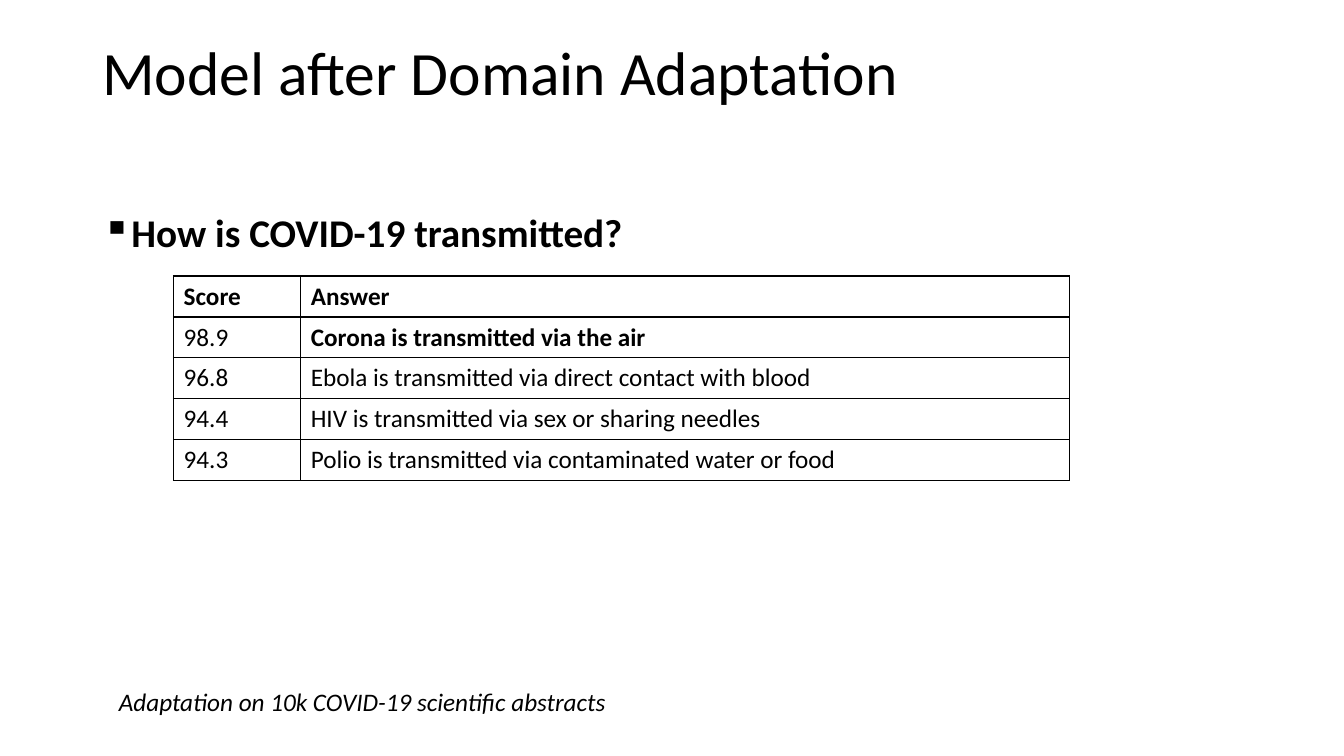
import pptx
import pptx.dml.color
import pptx.enum.text
import pptx.oxml
import pptx.oxml.ns
import pptx.util
from lxml import etree

Pt = pptx.util.Pt
ANCHOR = pptx.enum.text.MSO_ANCHOR
BLACK = pptx.dml.color.RGBColor(0, 0, 0)
WHITE = pptx.dml.color.RGBColor(255, 255, 255)
qn = pptx.oxml.ns.qn

ANSWERS = [
    ("Score", "Answer"),
    ("98.9", "Corona is transmitted via the air"),
    ("96.8", "Ebola is transmitted via direct contact with blood"),
    ("94.4", "HIV is transmitted via sex or sharing needles"),
    ("94.3", "Polio is transmitted via contaminated water or food"),
]
BOLD_CELLS = {(0, 0), (0, 1), (1, 1)}
COLUMN_WIDTHS = (90.8, 549.4)
ROW_HEIGHT = 29.2


def write(tf, text, **formats):
    p = tf.paragraphs[0]
    r = p.add_run()
    r.text = text
    r.font.color.rgb = BLACK
    for name, value in {"name": "Calibri", **formats}.items():
        setattr(r.font, name, value)
    return p


def add_text(box, text, anchor, wrap, **formats):
    """Add a text box at box (left, top, width, height) in points."""
    tf = s.shapes.add_textbox(*map(Pt, box)).text_frame
    tf.word_wrap = wrap
    tf.vertical_anchor = anchor
    return write(tf, text, **formats)


prs = pptx.Presentation()
prs.slide_width, prs.slide_height = Pt(960), Pt(540)
s = prs.slides.add_slide(prs.slide_layouts[6])

# Title and question
title = add_text((66, 1.4, 828, 104.4), "Model after Domain Adaptation",
                 ANCHOR.MIDDLE, True, size=Pt(44))
question = add_text((66, 149, 828, 337.7), "How is COVID-19 transmitted?",
                    ANCHOR.TOP, True, size=Pt(28), bold=True)
for p in (title, question):
    p.line_spacing = 0.9
pPr = question._p.get_or_add_pPr()
pPr.set("marL", str(Pt(18)))
pPr.set("indent", str(-Pt(18)))
etree.SubElement(pPr, qn("a:buChar")).set("char", "▪")

# Scored answers
table = s.shapes.add_table(
    len(ANSWERS), len(COLUMN_WIDTHS), Pt(124), Pt(197.2),
    Pt(sum(COLUMN_WIDTHS)), Pt(ROW_HEIGHT * len(ANSWERS))).table
for column, width in zip(table.columns, COLUMN_WIDTHS):
    column.width = Pt(width)
for i, answer in enumerate(ANSWERS):
    table.rows[i].height = Pt(ROW_HEIGHT)
    for j, text in enumerate(answer):
        cell = table.cell(i, j)
        write(cell.text_frame, text, size=Pt(18), bold=(i, j) in BOLD_CELLS)
        cell.fill.solid()
        cell.fill.fore_color.rgb = WHITE
        tcPr = cell._tc.get_or_add_tcPr()
        for k, side in enumerate(("lnL", "lnR", "lnT", "lnB")):
            tcPr.insert(k, pptx.oxml.parse_xml(
                f'<a:{side} {pptx.oxml.ns.nsdecls("a")} w="{Pt(1)}">'
                f'<a:solidFill><a:srgbClr val="{BLACK}"/></a:solidFill></a:{side}>'))

# Footnote
add_text((77.8, 486.7, 366.5, 29), "Adaptation on 10k COVID-19 scientific abstracts",
         ANCHOR.TOP, False, size=Pt(18), italic=True)

prs.save("out.pptx")
